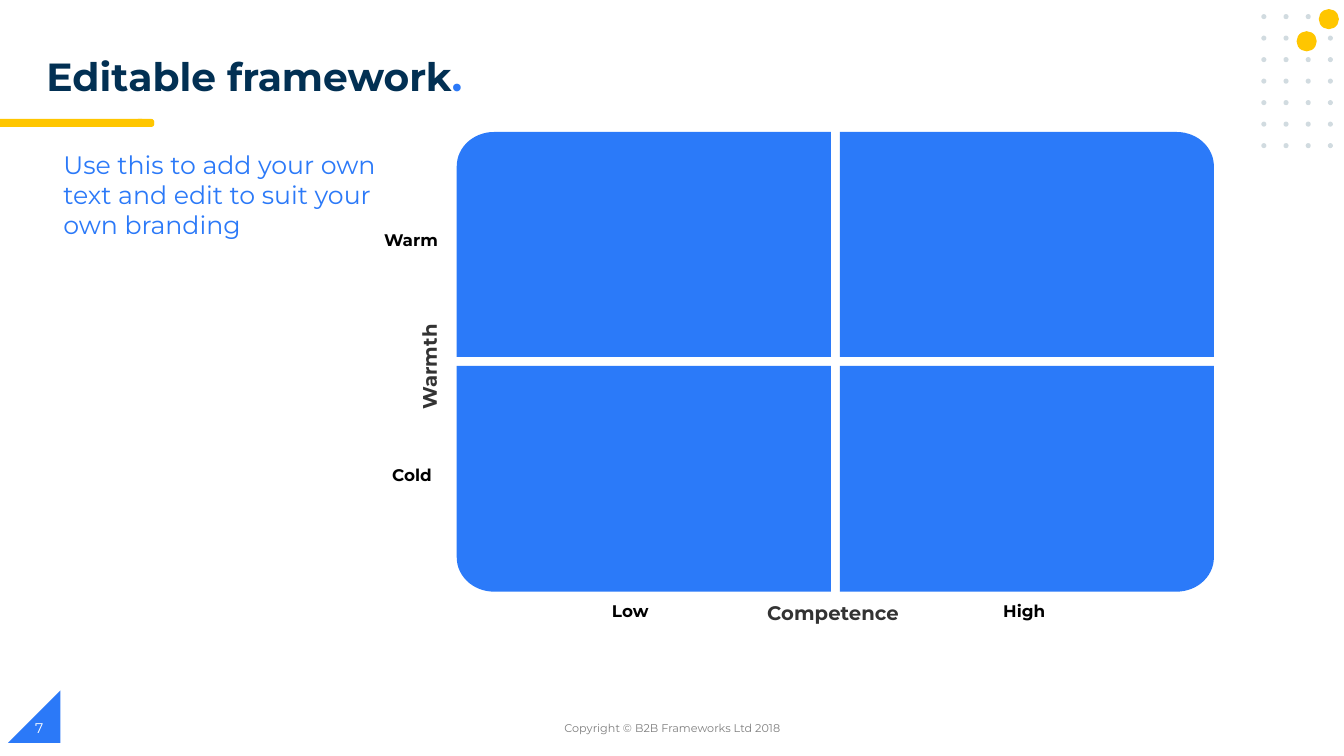
import math
import pptx
import pptx.util
import pptx.dml.color
import pptx.enum.shapes
import pptx.enum.text

Inches = pptx.util.Inches
Pt = pptx.util.Pt
RGB = pptx.dml.color.RGBColor.from_string
MSO = pptx.enum.shapes.MSO_SHAPE
ANCHOR = pptx.enum.text.MSO_ANCHOR
ALIGN = pptx.enum.text.PP_ALIGN

COLORS = {
    "blue": "2B79F8", "quadrant": "2B7AF9", "yellow": "FFC600", "dot": "D1DBE0",
    "navy": "023053", "grey": "7F7F7F", "dark": "333333", "black": "000000", "white": "FFFFFF",
}

prs = pptx.Presentation()
prs.slide_width = Inches(13.33)
prs.slide_height = Inches(7.5)
s = prs.slides.add_slide(prs.slide_layouts[5])


def add_filled(kind, left, top, width, height, color):
    sp = s.shapes.add_shape(kind, Inches(left), Inches(top), Inches(width), Inches(height))
    sp.shadow.inherit = False
    sp.fill.solid()
    sp.fill.fore_color.rgb = RGB(COLORS[color])
    sp.line.fill.background()
    return sp


def add_text(text, left, top, width, height, size, color, bold=False):
    sp = s.shapes.add_textbox(Inches(left), Inches(top), Inches(width), Inches(height))
    tf = sp.text_frame
    tf.word_wrap = True
    p = tf.paragraphs[0]
    p.text = text
    p.font.name = "Montserrat"
    p.font.size = Pt(size)
    p.font.bold = bold
    p.font.color.rgb = RGB(COLORS[color])
    return sp


corner = add_filled(MSO.RIGHT_TRIANGLE, 0.08, 6.85, 0.52, 0.52, "blue")
corner._element.spPr.xfrm.set("flipH", "1")

for top in (1.18, 1.2):
    add_filled(MSO.FLOWCHART_TERMINATOR, 1.34, top, 0.19, 0.06, "yellow")
    add_filled(MSO.RECTANGLE, 0, top, 1.41, 0.06, "yellow")

for row in range(7):
    for col in range(4):
        add_filled(MSO.OVAL, 12.51 + 0.22 * col, 0.14 + 1.28 / 6 * row, 0.05, 0.05, "dot")
for left, top in ((13.08, 0.09), (12.86, 0.31)):
    add_filled(MSO.OVAL, left, top, 0.2, 0.2, "yellow")

title = s.shapes.title
title.left, title.top, title.width, title.height = Inches(0.36), Inches(0.52), Inches(5.64), Inches(0.6)
tf = title.text_frame
tf.vertical_anchor = ANCHOR.TOP
tf.auto_size = pptx.enum.text.MSO_AUTO_SIZE.NONE
p = tf.paragraphs[0]
p.alignment = ALIGN.LEFT
p.line_spacing = 0.9
p.font.name = "Montserrat"
p.font.size = Pt(28)
p.font.bold = True
for text, color in (("Editable framework", "navy"), (".", "blue")):
    r = p.add_run()
    r.text = text
    r.font.color.rgb = RGB(COLORS[color])

footer = add_text("Copyright © B2B Frameworks Ltd 2018", 4.42, 7.02, 4.5, 0.4, 8, "grey")
footer.text_frame.paragraphs[0].alignment = ALIGN.CENTER
number = add_text("7", 0.25, 7.02, 3, 0.4, 10, "white")
for sp in (footer, number):
    sp.text_frame.vertical_anchor = ANCHOR.MIDDLE

add_text("Use this to add your own text and edit to suit your own branding",
         0.53, 1.43, 3.35, 2.04, 18, "blue")

radius_x, radius_y = 0.37, 0.34
angles = [math.radians(6 * i) for i in range(15, -1, -1)]
for outer_y, inner_y, dy in ((1.31, 3.54, 1), (5.87, 3.63, -1)):
    for outer_x, inner_x, dx in ((4.53, 8.24, 1), (12.04, 8.33, -1)):
        arc = [(outer_x + dx * radius_x * (1 - math.sin(a)),
                outer_y + dy * radius_y * (1 - math.cos(a))) for a in angles]
        outline = arc + [(inner_x, outer_y), (inner_x, inner_y), (outer_x, inner_y)]
        points = [(Inches(x), Inches(y)) for x, y in outline]
        fb = s.shapes.build_freeform(*points[0])
        fb.add_line_segments(points[1:], close=True)
        quadrant = fb.convert_to_shape()
        quadrant.shadow.inherit = False
        quadrant.fill.solid()
        quadrant.fill.fore_color.rgb = RGB(COLORS["quadrant"])
        quadrant.line.fill.background()

labels = (
    ("Competence", 7.6, 5.95, 1.4, 0.24, 14, "dark", 0),
    ("Warmth", 3.82, 3.52, 0.86, 0.24, 14, "dark", 270),
    ("Warm", 3.8, 2.27, 0.61, 0.21, 12, "black", 0),
    ("Cold", 3.88, 4.6, 0.45, 0.21, 12, "black", 0),
    ("Low", 6.06, 5.95, 0.42, 0.21, 12, "black", 0),
    ("High", 9.94, 5.95, 0.48, 0.21, 12, "black", 0),
)
for text, left, top, width, height, size, color, rotation in labels:
    sp = add_text(text, left, top, width, height, size, color, bold=True)
    sp.rotation = rotation
    tf = sp.text_frame
    tf.word_wrap = False
    tf.margin_left = Inches(0.01)
    tf.margin_right = tf.margin_bottom = 0
    tf.margin_top = Inches(0.01)

prs.save("out.pptx")
